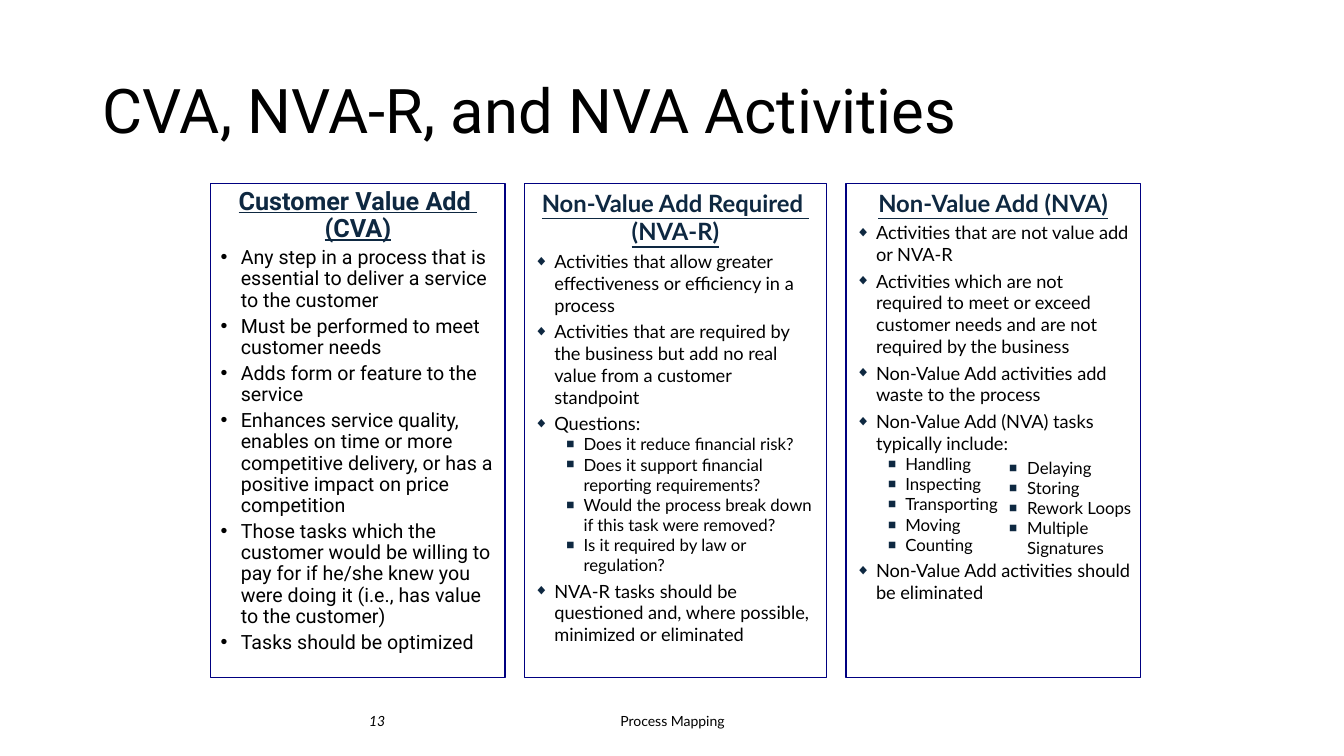
from lxml import etree
from pptx import Presentation
from pptx.dml.color import RGBColor
from pptx.enum.shapes import MSO_SHAPE
from pptx.enum.text import MSO_ANCHOR, MSO_AUTO_SIZE, PP_ALIGN
from pptx.oxml.ns import qn
from pptx.util import Pt

PX = 9144  # 100 px to the inch
RECTANGLE = MSO_SHAPE.RECTANGLE
TOP, MIDDLE = MSO_ANCHOR.TOP, MSO_ANCHOR.MIDDLE
LEFT, CENTER, RIGHT = PP_ALIGN.LEFT, PP_ALIGN.CENTER, PP_ALIGN.RIGHT
NAVY, INK, BORDER, WHITE = "0E2841", "000000", "000080", "FFFFFF"
SANS, HUMANIST = "Roboto", "Lato"

# Bullet: character, colour, size in percent
DOT = ("•", INK, 100)
DIAMOND = ("◆", NAVY, 80)
SQUARE = ("■", NAVY, 80)

COLUMN_TOP, COLUMN_HEIGHT, COLUMN_GAP = 182, 490, 19
FIRST_COLUMN_LEFT = 209

# Nested lists hold second-level points.
CVA = dict(
    width=292, font=SANS, heading_size=18, size=14, bullet=DOT, spacing=0.9,
    heading=["Customer Value Add ", "(CVA)"],
    points=[
        "Any step in a process that is essential to deliver a service to the customer",
        "Must be performed to meet customer needs",
        "Adds form or feature to the service",
        "Enhances service quality, enables on time or more competitive delivery, "
        "or has a positive impact on price competition",
        "Those tasks which the customer would be willing to pay for if he/she knew "
        "you were doing it (i.e., has value to the customer)",
        "Tasks should be optimized",
    ],
)
NVA_R = dict(
    width=300, font=HUMANIST, heading_size=17, size=13, bullet=DIAMOND, spacing=1.0,
    heading=["Non-Value Add Required ", "(NVA-R)"],
    points=[
        "Activities that allow greater effectiveness or efficiency in a process",
        "Activities that are required by the business but add no real value from a "
        "customer standpoint",
        "Questions:",
        [
            "Does it reduce financial risk?",
            "Does it support financial reporting requirements?",
            "Would the process break down if this task were removed?",
            "Is it required by law or regulation?",
        ],
        "NVA-R tasks should be questioned and, where possible, minimized or eliminated",
    ],
)
NVA = dict(
    width=292, font=HUMANIST, heading_size=17, size=13, bullet=DIAMOND, spacing=1.0,
    heading=["Non-Value Add (NVA)"],
    points=[
        "Activities that are not value add or NVA-R",
        "Activities which are not required to meet or exceed customer needs and are "
        "not required by the business",
        "Non-Value Add activities add waste to the process",
        "Non-Value Add (NVA) tasks typically include:",
        ["Handling", "Inspecting", "Transporting", "Moving", "Counting"],
        "Non-Value Add activities should be eliminated",
    ],
)
MORE_NVA_TASKS = ["Delaying", "Storing", "Rework Loops", "Multiple \vSignatures"]


def rgb(value):
    return RGBColor.from_string(value)


def px(*lengths):
    return [length * PX for length in lengths]


def set_indent(paragraph, margin, hanging):
    margin, hanging = px(margin, hanging)
    properties = paragraph._p.get_or_add_pPr()
    properties.set("marL", str(margin))
    properties.set("indent", str(-hanging))


def set_bullet(paragraph, bullet):
    character, color, percent = bullet
    properties = paragraph._p.get_or_add_pPr()
    bullet_color = etree.SubElement(properties, qn("a:buClr"))
    etree.SubElement(bullet_color, qn("a:srgbClr"), val=color)
    etree.SubElement(properties, qn("a:buSzPct"), val=str(percent * 1000))
    etree.SubElement(properties, qn("a:buFont"), typeface="Arial")
    etree.SubElement(properties, qn("a:buChar"), char=character)


def write(paragraph, text, font, size, color=INK, align=LEFT, spacing=1.0, before=0):
    paragraph.text = text
    paragraph.alignment = align
    paragraph.line_spacing = spacing
    paragraph.space_before = Pt(before)
    for run in paragraph.runs:
        run.font.name = font
        run.font.size = Pt(size)
        run.font.color.rgb = rgb(color)


def next_paragraph(frame):
    """Return the empty first paragraph, or a new one after the last."""
    first = frame.paragraphs[0]
    return frame.add_paragraph() if first.text else first


def add_tasks(frame, tasks, margin, hanging):
    """Add second-level points with square bullets."""
    for task in tasks:
        paragraph = next_paragraph(frame)
        write(paragraph, task, HUMANIST, 12)
        paragraph.level = 1
        set_indent(paragraph, margin, hanging)
        set_bullet(paragraph, SQUARE)


def add_title(slide, box, text):
    title = slide.shapes.title
    title.left, title.top, title.width, title.height = px(*box)
    frame = title.text_frame
    frame.auto_size = MSO_AUTO_SIZE.NONE
    frame.vertical_anchor = MIDDLE
    write(frame.paragraphs[0], text, SANS, 44, spacing=0.9)


def add_text_box(slide, box, anchor):
    frame = slide.shapes.add_textbox(*px(*box)).text_frame
    frame.word_wrap = True
    frame.vertical_anchor = anchor
    return frame


def add_column(slide, box, column):
    panel = slide.shapes.add_shape(RECTANGLE, *px(*box))
    panel.shadow.inherit = False
    panel.fill.solid()
    panel.fill.fore_color.rgb = rgb(WHITE)
    panel.line.color.rgb = rgb(BORDER)
    panel.line.width = Pt(1)
    frame = panel.text_frame
    frame.word_wrap = True
    frame.vertical_anchor = TOP

    font, spacing = column["font"], column["spacing"]
    heading_size, size = column["heading_size"], column["size"]
    for index, line in enumerate(column["heading"]):
        paragraph = next_paragraph(frame)
        write(paragraph, line, font, heading_size, NAVY, CENTER, spacing,
              before=0 if index else heading_size / 4)
        set_indent(paragraph, 20, 20)
        for run in paragraph.runs:
            run.font.bold = run.font.underline = True

    for point in column["points"]:
        if isinstance(point, list):
            add_tasks(frame, point, 49, 17)
            continue
        paragraph = next_paragraph(frame)
        write(paragraph, point, font, size, spacing=spacing, before=size / 4)
        set_indent(paragraph, 20, 20)
        set_bullet(paragraph, column["bullet"])


def add_footer(slide, left, top, number, topic):
    page = add_text_box(slide, (left, top, 300, 40), MIDDLE).paragraphs[0]
    write(page, number, HUMANIST, 10, align=RIGHT)
    page.runs[0].font.italic = True
    label = add_text_box(slide, (left + 350, top, 450, 40), MIDDLE).paragraphs[0]
    write(label, topic, HUMANIST, 10, align=CENTER)


def main():
    deck = Presentation()
    deck.slide_width, deck.slide_height = px(1333, 750)
    slide = deck.slides.add_slide(deck.slide_layouts[5])
    add_title(slide, (92, 40, 1150, 145), "CVA, NVA-R, and NVA Activities")

    left = FIRST_COLUMN_LEFT
    for column in (CVA, NVA_R, NVA):
        add_column(slide, (left, COLUMN_TOP, column["width"], COLUMN_HEIGHT), column)
        left += column["width"] + COLUMN_GAP

    more_tasks = add_text_box(slide, (941, 449, 225, 172), TOP)
    add_tasks(more_tasks, MORE_NVA_TASKS, 68, 18)
    add_footer(slide, 92, 695, "13", "Process Mapping")
    deck.save("out.pptx")


if __name__ == "__main__":
    main()
